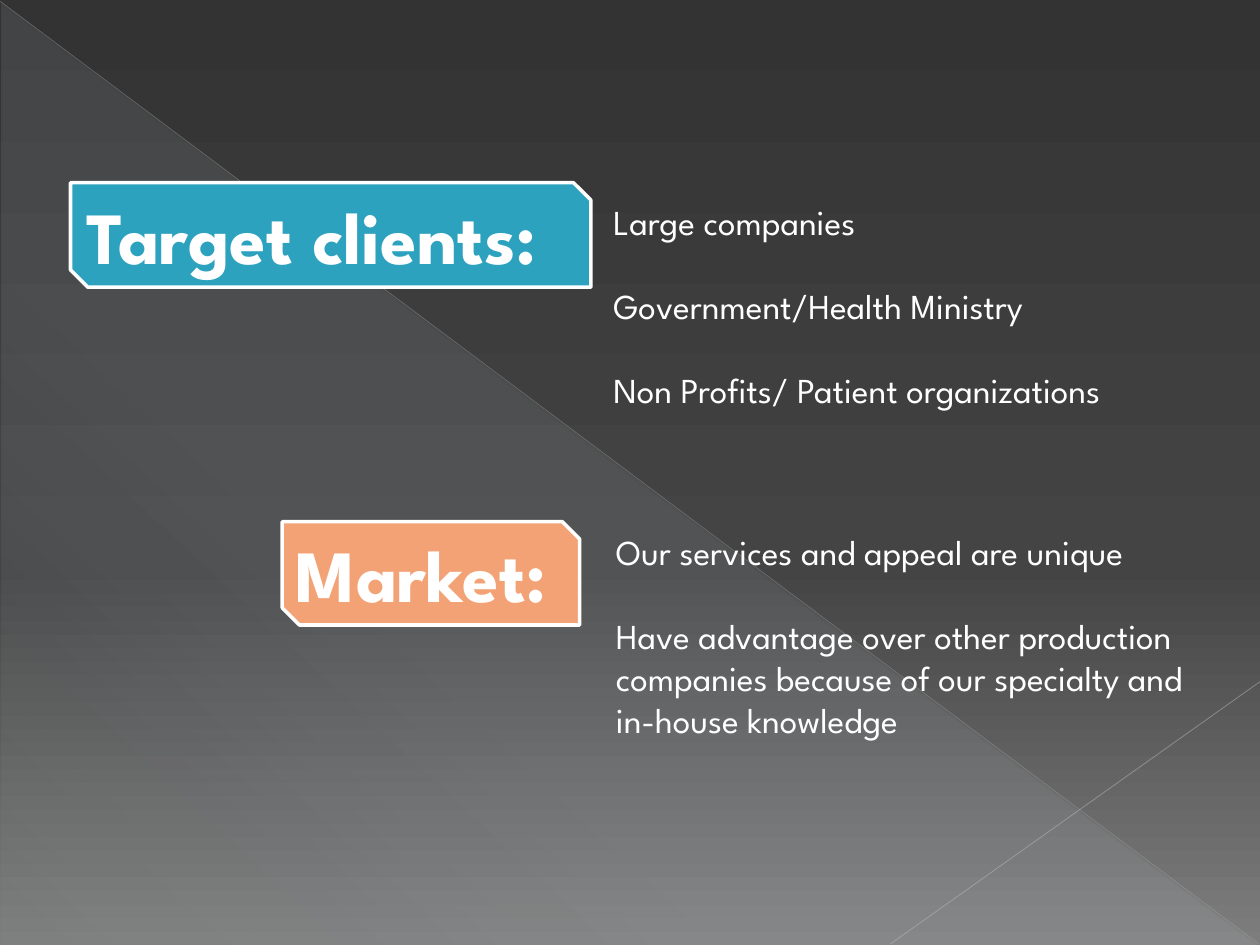
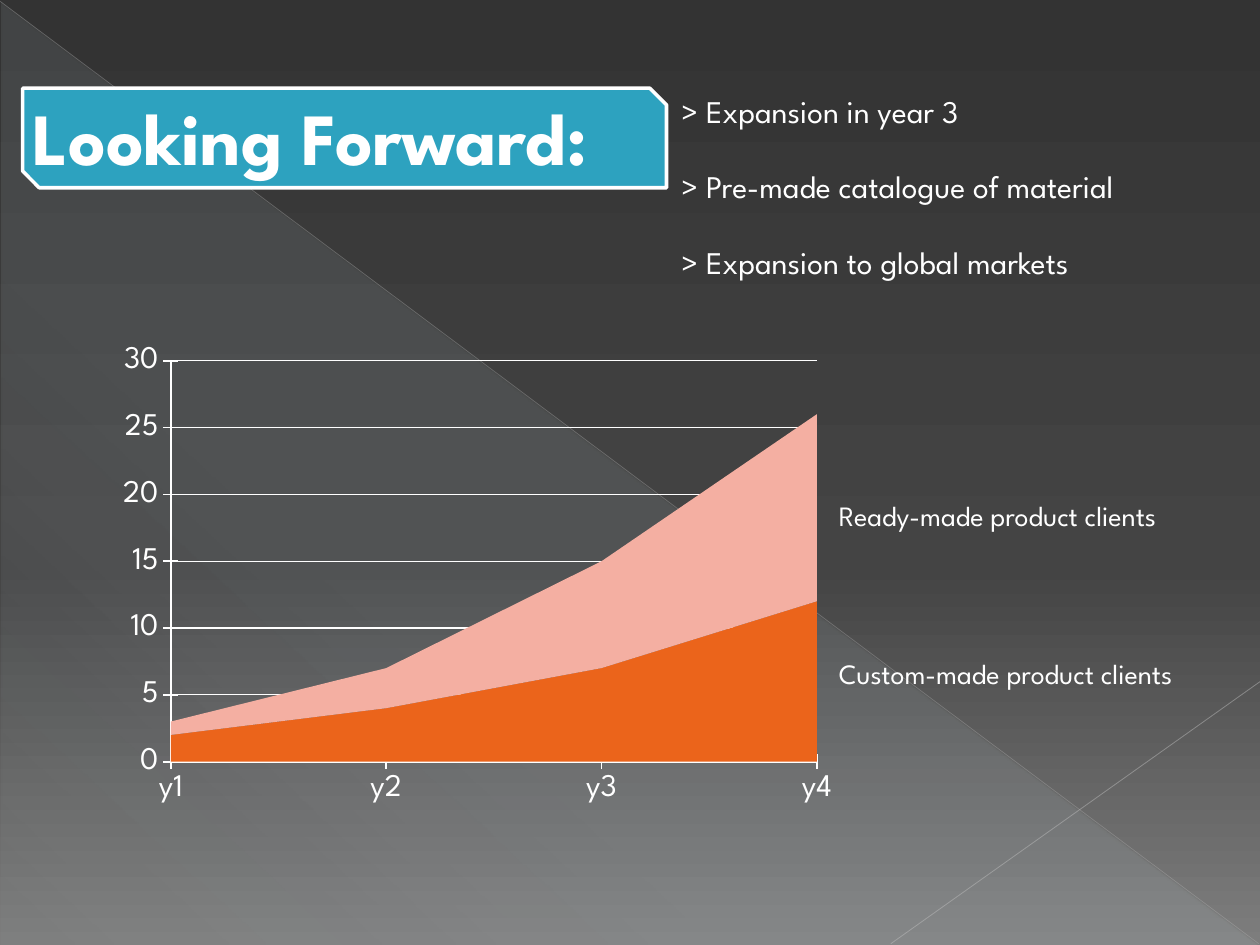
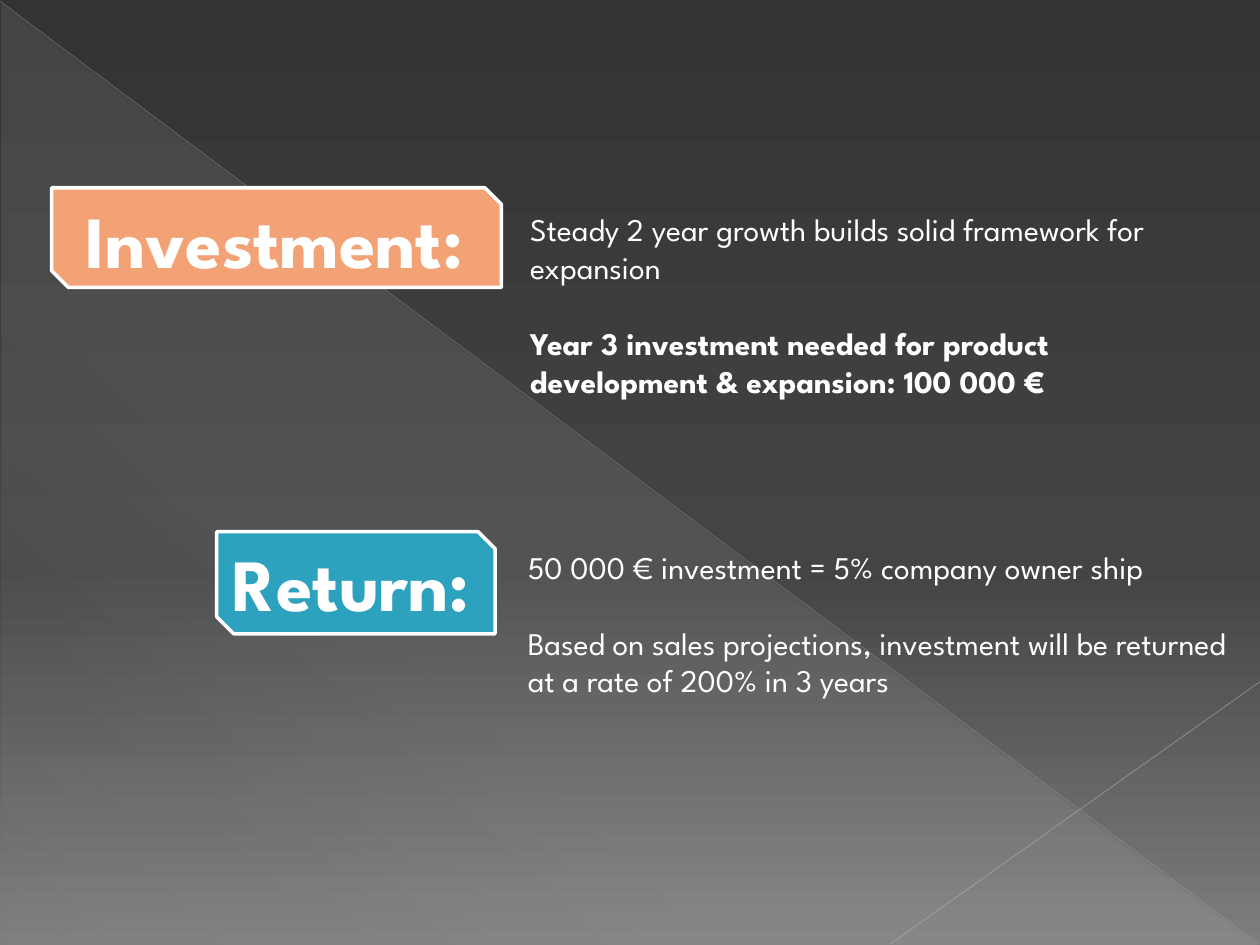
import pptx
import pptx.chart.data
import pptx.dml.color
import pptx.enum.chart
import pptx.enum.shapes
import pptx.oxml
import pptx.oxml.ns
import pptx.util
from pptx.util import Inches

FONT = "League Spartan"
COLORS = {
    "white": "FFFFFF",
    "teal": "2DA2BF",
    "peach": "F3A276",
    "orange": "EB641B",
    "pink": "F4AFA2",
    "ice": "DEF5FA",
    "diagonal": "B9B9B9",
    "corner": "C1C1C1",
    "night": "333333",
    "slate": "444444",
    "ash": "7D7D7D",
}
# Gradient stops: position in %, colour, opacity in %
BACKDROP = [(0, "night", 100), (60, "slate", 100), (100, "ash", 100)]
SHEEN = [(0, "ice", 10), (70, "ice", 8), (100, "ice", 1)]
qn = pptx.oxml.ns.qn


def rgb(color):
    return pptx.dml.color.RGBColor.from_string(COLORS[color])


def element(tag, **attributes):
    made = pptx.oxml.parse_xml(f"<{tag} {pptx.oxml.ns.nsdecls(tag.split(':')[0])}/>")
    for key, value in attributes.items():
        made.set(key, str(value))
    return made


class Deck:
    """Holds the style and the slide being drawn."""

    def __init__(self):
        self.prs = pptx.Presentation()
        self.prs.slide_width = Inches(10)
        self.prs.slide_height = Inches(7.5)
        self.slide = None

    def new_slide(self):
        self.slide = self.prs.slides.add_slide(self.prs.slide_layouts[6])
        self.slide.background.fill.solid()
        self.gradient(self.slide._element, BACKDROP, 90)

        sheen = self.shape("RIGHT_TRIANGLE", 0.01, 0.02, 9.98, 7.48, "ice")
        self.gradient(sheen._element, SHEEN, 133)
        self.line(0, 0.01, 9.99, 7.49, "diagonal", 0.39, 35)
        self.line(10, 5.41, 7.07, 7.49, "corner", 0.47, 45)

    def gradient(self, owner, stops, angle):
        """Swap the solid fill inside owner for a linear gradient."""
        fill = element("a:gradFill", rotWithShape=1)
        stop_list = element("a:gsLst")
        for position, color, opacity in stops:
            stop = element("a:gs", pos=position * 1000)
            shade = element("a:srgbClr", val=COLORS[color])
            if opacity < 100:
                shade.append(element("a:alpha", val=opacity * 1000))
            stop.append(shade)
            stop_list.append(stop)
        fill.append(stop_list)
        fill.append(element("a:lin", ang=angle * 60000, scaled=0))
        solid = owner.find(".//" + qn("a:solidFill"))
        solid.getparent().replace(solid, fill)

    def shape(self, preset, left, top, width, height, color, outline=None):
        kind = getattr(pptx.enum.shapes.MSO_SHAPE, preset)
        shape = self.slide.shapes.add_shape(
            kind, Inches(left), Inches(top), Inches(width), Inches(height))
        shape.shadow.inherit = False
        shape.fill.solid()
        shape.fill.fore_color.rgb = rgb(color)
        if outline:
            shape.line.color.rgb = rgb("white")
            shape.line.width = pptx.util.Pt(outline)
        else:
            shape.line.fill.background()
        return shape

    def line(self, x1, y1, x2, y2, color, width, opacity):
        line = self.slide.shapes.add_connector(
            pptx.enum.shapes.MSO_CONNECTOR.STRAIGHT,
            Inches(x1), Inches(y1), Inches(x2), Inches(y2))
        line.line.color.rgb = rgb(color)
        line.line.width = pptx.util.Pt(width)
        properties = line._element.spPr
        shade = properties.find(".//" + qn("a:srgbClr"))
        shade.append(element("a:alpha", val=opacity * 1000))
        properties.append(element("a:effectLst"))

    def text(self, left, top, width, height, paragraphs, size, bold=()):
        """Paragraphs one blank line apart; bold lists the bold ones."""
        box = self.slide.shapes.add_textbox(
            Inches(left), Inches(top), Inches(width), Inches(height))
        frame = box.text_frame
        frame.word_wrap = True
        frame.text = "\n".join(paragraphs)
        for index, paragraph in enumerate(frame.paragraphs):
            if index:
                paragraph.space_before = pptx.util.Pt(round(size * 1.2, 1))
            font = paragraph.runs[0].font
            font.name = FONT
            font.size = pptx.util.Pt(size)
            font.bold = index in bold
            font.color.rgb = rgb("white")

    def heading(self, title, color, plate, left, top, width):
        """A snipped plate with a large bold title over it."""
        self.shape("SNIP_2_DIAG_RECTANGLE", *plate, color, outline=2)
        self.text(left, top, width, 0.81, [title], 42, bold=[0])

    def area_chart(self, left, top, width, height, categories, series, plot):
        data = pptx.chart.data.CategoryChartData(number_format="0")
        data.categories = categories
        for name, values, _ in series:
            data.add_series(name, values)
        chart = self.slide.shapes.add_chart(
            pptx.enum.chart.XL_CHART_TYPE.AREA_STACKED,
            Inches(left), Inches(top), Inches(width), Inches(height), data).chart
        chart.has_legend = False
        chart.has_title = False
        chart.font.name = FONT
        chart.font.size = pptx.util.Pt(18)
        chart.font.color.rgb = rgb("white")
        chart.plots[0].vary_by_categories = False
        for drawn, (_, _, color) in zip(chart.plots[0].series, series):
            drawn.format.fill.solid()
            drawn.format.fill.fore_color.rgb = rgb(color)

        # Axes
        years, clients = chart.category_axis, chart.value_axis
        for axis in (years, clients):
            axis.major_tick_mark = pptx.enum.chart.XL_TICK_MARK.CROSS
            axis.format.line.color.rgb = rgb("white")
            axis.format.line.width = pptx.util.Pt(1)
        years.has_major_gridlines = False
        clients.minimum_scale, clients.maximum_scale = 0, 30
        clients.major_unit = 5
        clients.tick_labels.number_format = "0"
        clients.tick_labels.number_format_is_linked = False
        clients.has_major_gridlines = True
        clients.major_gridlines.format.line.color.rgb = rgb("white")
        clients.major_gridlines.format.line.width = pptx.util.Pt(0.75)
        clients._element.find(qn("c:crossBetween")).set("val", "midCat")

        # Fixed place of the plot inside the chart
        area = chart._chartSpace.find(".//" + qn("c:plotArea"))
        for old in area.findall(qn("c:layout")):
            area.remove(old)
        layout, manual = element("c:layout"), element("c:manualLayout")
        manual.append(element("c:layoutTarget", val="inner"))
        for tag in ("xMode", "yMode"):
            manual.append(element(f"c:{tag}", val="edge"))
        for tag, value in zip("xywh", plot):
            manual.append(element(f"c:{tag}", val=value))
        layout.append(manual)
        area.insert(0, layout)


def main():
    deck = Deck()

    # Clients and market
    deck.new_slide()
    deck.text(4.77, 1.54, 5.04, 1.79, [
        "Large companies",
        "Government/Health Ministry",
        "Non Profits/ Patient organizations"], 20)
    deck.text(4.79, 4.16, 5.04, 1.8, [
        "Our services and appeal are unique",
        "Have advantage over other production companies because of "
        "our specialty and in-house knowledge"], 20)
    deck.heading("Target clients:", "teal", (0.56, 1.45, 4.13, 0.83), 0.59, 1.47, 5.67)
    deck.heading("Market:", "peach", (2.24, 4.14, 2.36, 0.82), 2.25, 4.15, 3.15)

    # Growth outlook
    deck.new_slide()
    deck.text(5.31, 0.68, 4.69, 1.62, [
        "> Expansion in year 3",
        "> Pre-made catalogue of material",
        "> Expansion to global markets"], 18)
    deck.area_chart(
        0.47, 2.66, 6.33, 4.08, ["y1", "y2", "y3", "y4"],
        [("Series 1", (2, 4, 7, 12), "orange"),
         ("Series 2", (1, 3, 8, 14), "pink")],
        plot=(0.14, 0.05, 0.81, 0.78))
    deck.heading("Looking Forward:", "teal", (0.18, 0.7, 5.11, 0.79), 0.16, 0.68, 5.12)
    for top, product in ((3.91, "Ready-made"), (5.16, "Custom-made")):
        deck.text(6.56, top, 3.44, 0.37, [f"{product} product clients"], 16)

    # Investment and return
    deck.new_slide()
    deck.text(4.11, 1.62, 5.74, 1.62, [
        "Steady 2 year growth builds solid framework for expansion",
        "Year 3 investment needed for product development & expansion: "
        "100 000 €"], 18, bold=[1])
    deck.text(4.09, 4.3, 5.91, 1.31, [
        "50 000 € investment = 5% company owner ship",
        "Based on sales projections, investment will be returned at a rate "
        "of 200% in 3 years"], 18)
    deck.heading("Investment:", "peach", (0.41, 1.49, 3.57, 0.79), 0.58, 1.5, 3.46)
    deck.heading("Return:", "teal", (1.72, 4.22, 2.21, 0.81), 1.75, 4.22, 2.46)

    deck.prs.save("out.pptx")


if __name__ == "__main__":
    main()
